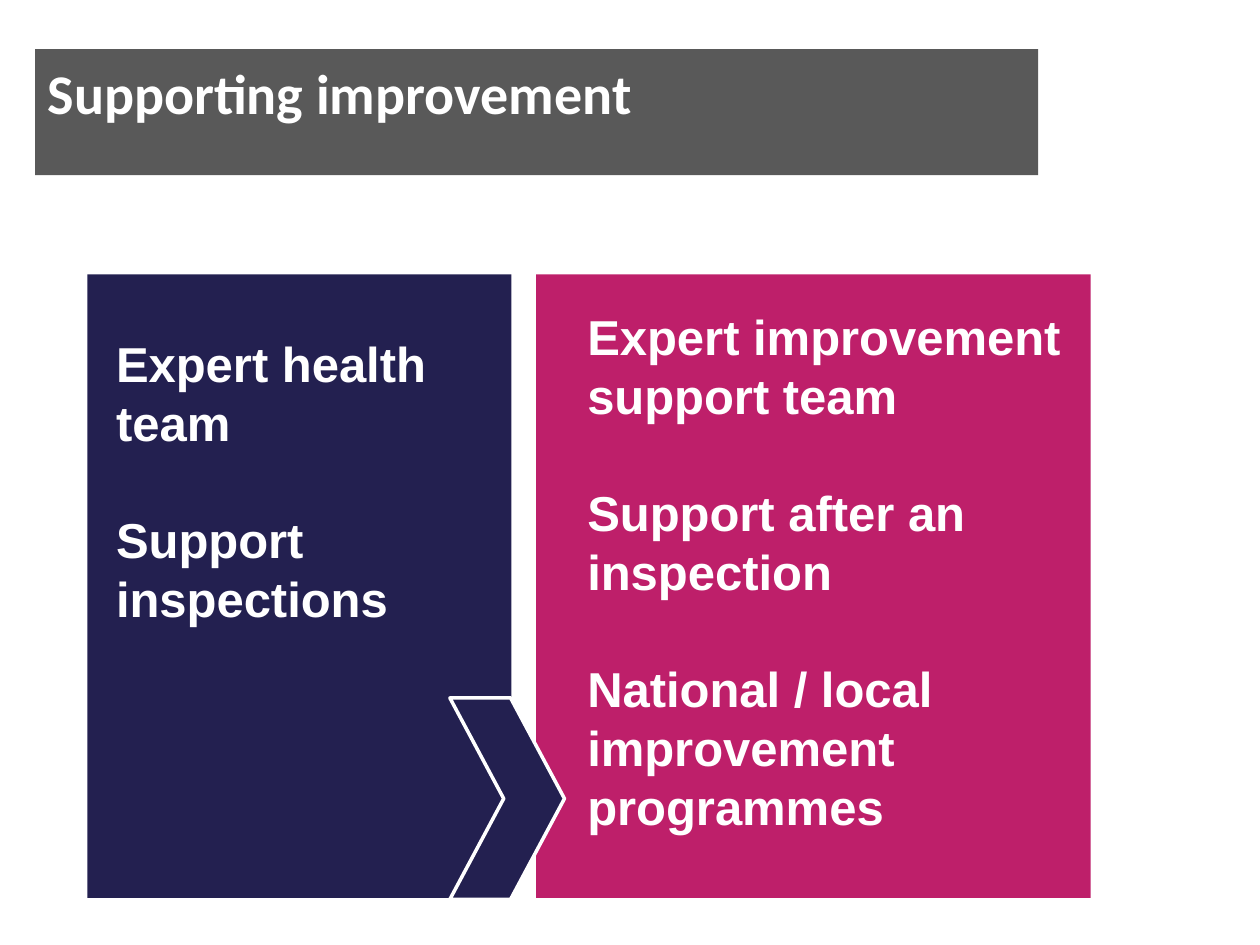
"""Build the "Supporting improvement" slide with two panels and a chevron."""
from pptx import Presentation
from pptx.dml.color import RGBColor
from pptx.enum.shapes import MSO_SHAPE
from pptx.enum.text import MSO_ANCHOR, MSO_AUTO_SIZE, PP_ALIGN
from pptx.util import Cm, Pt

RECTANGLE = MSO_SHAPE.RECTANGLE
CHEVRON = MSO_SHAPE.CHEVRON
TOP = MSO_ANCHOR.TOP
LEFT = PP_ALIGN.LEFT
GROW = MSO_AUTO_SIZE.SHAPE_TO_FIT_TEXT

NAVY, PINK, GREY, WHITE = "232050", "BE1F6A", "595959", "FFFFFF"
PANEL_TOP, PANEL_HEIGHT = 5.53, 12.57
LINE_PITCH = Pt(33.6)


def color(value):
    return RGBColor.from_string(value)


def add_block(kind, left, top, width, height, fill):
    shape = slide.shapes.add_shape(kind, Cm(left), Cm(top), Cm(width), Cm(height))
    shape.shadow.inherit = False
    shape.fill.solid()
    shape.fill.fore_color.rgb = color(fill)
    shape.line.fill.background()
    return shape


presentation = Presentation()
presentation.slide_width = Cm(25.4)
presentation.slide_height = Cm(19.05)
slide = presentation.slides.add_slide(presentation.slide_layouts[6])

for left, width, fill in [(1.76, 8.55, NAVY), (10.81, 11.18, PINK)]:
    add_block(RECTANGLE, left, PANEL_TOP, width, PANEL_HEIGHT, fill)

panel_texts = [
    (2.09, 6.6, 6.9, 6.25, ["Expert health team", "Support inspections"]),
    (11.59, 6.05, 10.4, 11.02, [
        "Expert improvement support team",
        "Support after an inspection",
        "National / local improvement programmes",
    ]),
]
for left, top, width, height, lines in panel_texts:
    text_box = slide.shapes.add_textbox(Cm(left), Cm(top), Cm(width), Cm(height))
    text_frame = text_box.text_frame
    text_frame.word_wrap = True
    text_frame.auto_size = GROW
    text_frame.text = "\n".join(lines)
    for index, paragraph in enumerate(text_frame.paragraphs):
        paragraph.line_spacing = LINE_PITCH
        if index:
            paragraph.space_before = LINE_PITCH
        font = paragraph.runs[0].font
        font.name = "Arial"
        font.size = Pt(28)
        font.bold = True
        font.color.rgb = color(WHITE)

chevron = add_block(CHEVRON, 9.07, 14.07, 2.31, 4.06, NAVY)
chevron.adjustments[0] = 0.47
chevron.line.color.rgb = color(WHITE)
chevron.line.width = Pt(2)

title = add_block(RECTANGLE, 0.71, 0.99, 20.22, 2.54, GREY)
title_frame = title.text_frame
title_frame.vertical_anchor = TOP
title_frame.margin_top = Cm(0.2)
title_frame.text = "Supporting improvement"
title_paragraph = title_frame.paragraphs[0]
title_paragraph.alignment = LEFT
title_font = title_paragraph.runs[0].font
title_font.name = "Calibri"
title_font.size = Pt(32)
title_font.bold = True
title_font.color.rgb = color(WHITE)

presentation.save("out.pptx")
